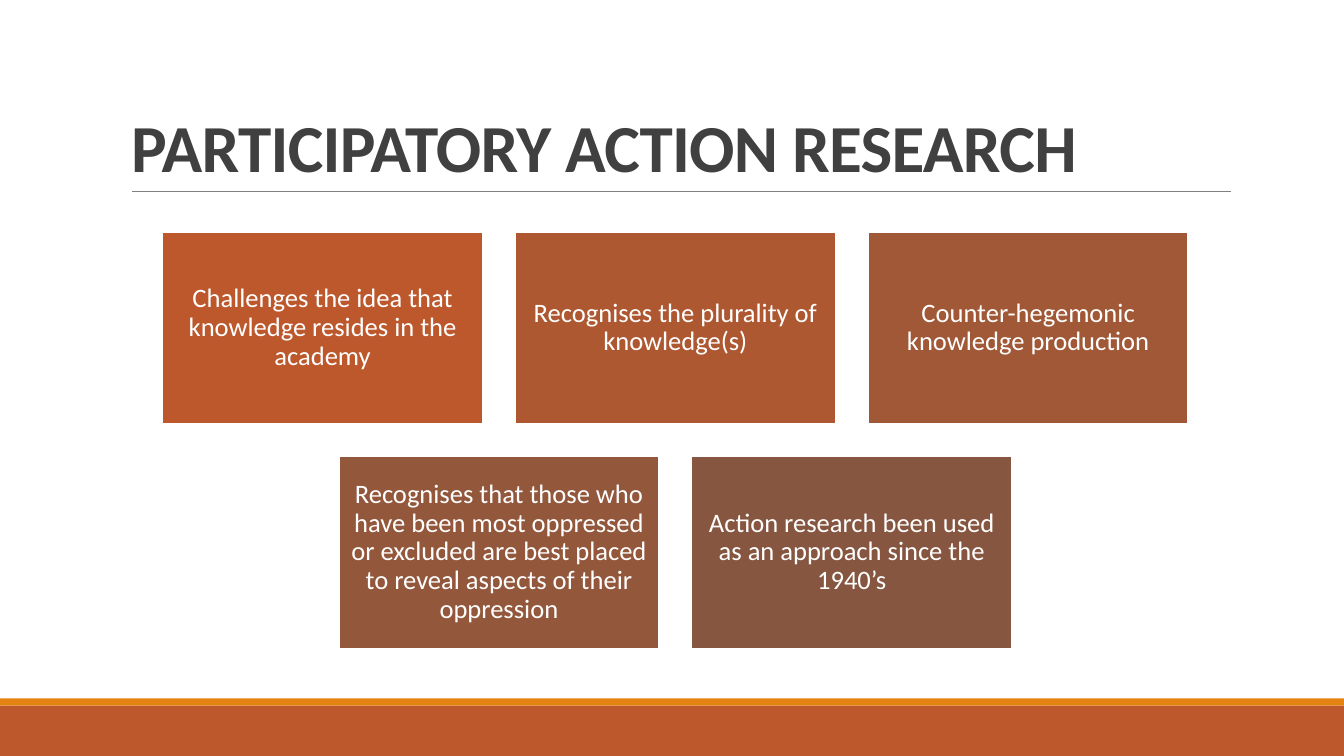
from pptx import Presentation
from pptx import util as u
from pptx.dml.color import RGBColor
from pptx.enum import shapes, text
from pptx.oxml.ns import qn
from lxml import etree

Cm, Pt = u.Cm, u.Pt


def tint(color, code):
    color.rgb = RGBColor.from_string(code)


def block(x, y, w, h, code):
    box = slide.shapes.add_shape(shapes.MSO_SHAPE.RECTANGLE, Cm(x), Cm(y), Cm(w), Cm(h))
    box.shadow.inherit = False
    box.fill.solid()
    tint(box.fill.fore_color, code)
    box.line.fill.background()
    return box


deck = Presentation()
deck.slide_width, deck.slide_height = Cm(33.87), Cm(19.05)
slide = deck.slides.add_slide(deck.slide_layouts[5])

block(0, 17.78, 33.87, 1.27, "BD582C")
block(0, 17.6, 33.87, 0.18, "E48312")

rule = slide.shapes.add_connector(
    shapes.MSO_CONNECTOR.STRAIGHT, Cm(3.33), Cm(4.82), Cm(31.01), Cm(4.82))
tint(rule.line.color, "808080")
rule.line.width = Pt(0.5)
etree.SubElement(rule.element.spPr, qn("a:effectLst"))

title = slide.shapes.title
title.left, title.top, title.width, title.height = Cm(3.05), Cm(0.79), Cm(27.94), Cm(4.04)
frame = title.text_frame
frame.text = "PARTICIPATORY ACTION RESEARCH"
frame.word_wrap = True
frame.vertical_anchor = text.MSO_ANCHOR.BOTTOM
para = frame.paragraphs[0]
para.alignment = text.PP_ALIGN.LEFT
para.line_spacing = 0.85
run = para.runs[0]
run.font.name, run.font.size, run.font.bold = "Calibri", Pt(48), True
tint(run.font.color, "404040")
run.font._element.set("spc", "-50")

cards = [
    ("Challenges the idea that knowledge resides in the academy", "BD582C"),
    ("Recognises the plurality of knowledge(s)", "AE5832"),
    ("Counter-hegemonic knowledge production", "A05837"),
    ("Recognises that those who have been most oppressed or excluded "
     "are best placed to reveal aspects of their oppression", "93573C"),
    ("Action research been used as an approach since the 1940’s", "865640"),
]
wide, high, step = 8.08, 4.85, 8.89
starts = [4.09, 4.09 + step / 2]

for i, (words, code) in enumerate(cards):
    row, col = divmod(i, 3)
    card = block(starts[row] + col * step, 5.84 + row * 5.65, wide, high, code)
    tint(card.line.color, "FFFFFF")
    card.line.width = Pt(1.25)
    frame = card.text_frame
    frame.text = words
    frame.word_wrap = True
    frame.vertical_anchor = text.MSO_ANCHOR.MIDDLE
    frame.margin_left = frame.margin_right = Cm(0.2)
    frame.margin_top = frame.margin_bottom = Cm(0.2)
    para = frame.paragraphs[0]
    para.alignment = text.PP_ALIGN.CENTER
    para.line_spacing = 0.9
    run = para.runs[0]
    run.font.name, run.font.size = "Calibri", Pt(19)
    tint(run.font.color, "FFFFFF")

deck.save("out.pptx")
